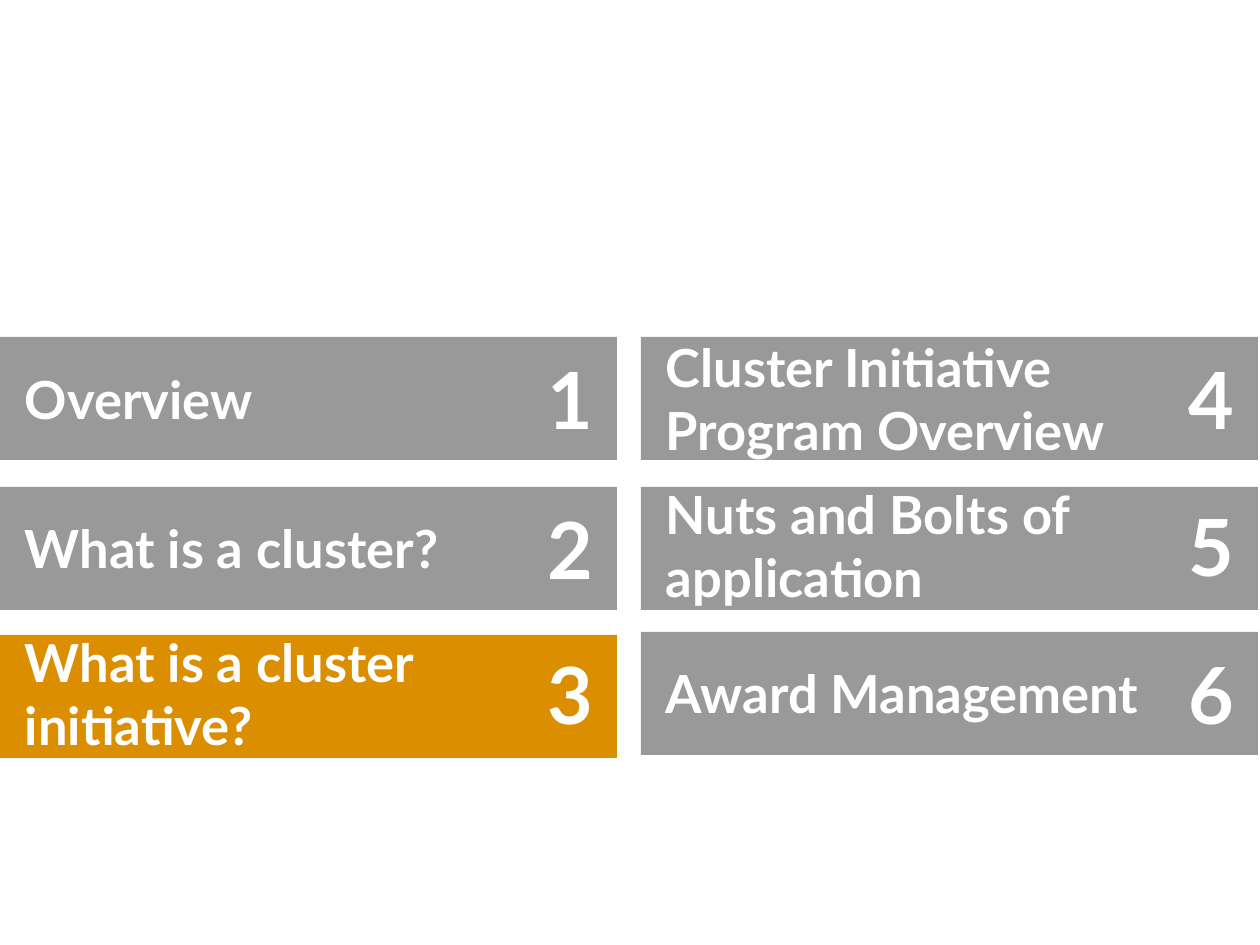
from dataclasses import dataclass

from lxml import etree
from pptx import Presentation
from pptx.dml.color import RGBColor
from pptx.enum.shapes import MSO_SHAPE
from pptx.enum.text import MSO_ANCHOR, MSO_AUTO_SIZE, PP_ALIGN
from pptx.oxml.ns import qn
from pptx.util import Emu, Pt

RECT = MSO_SHAPE.RECTANGLE
MIDDLE = MSO_ANCHOR.MIDDLE
FIT_SHAPE, FIT_NONE = MSO_AUTO_SIZE.SHAPE_TO_FIT_TEXT, MSO_AUTO_SIZE.NONE
LEFT, RIGHT = PP_ALIGN.LEFT, PP_ALIGN.RIGHT

PX_PER_INCH = 126
FONT = "Lato"
COLORS = {"current": "DA8E00", "other": "343434", "text": "FFFFFF"}

# Sizes in px
BAR_W, BAR_H = 617, 123
LABEL_W, LABEL_H = 517, 70
NUMBER_W, NUMBER_H = 47, 96
LABEL_DX, NUMBER_DX = 25, 546
NUMBER_RISE = 13  # centres the number on its label
COLUMNS = (0, 641)


@dataclass
class Topic:
    label: str
    column: int
    bar_top: int
    label_top: int
    current: bool = False


TOPICS = [
    Topic("Overview", 0, 337, 363),
    Topic("What is a cluster?", 0, 487, 513),
    Topic("What is a cluster initiative?", 0, 635, 658, current=True),
    Topic("Cluster Initiative Program Overview", 1, 337, 363),
    Topic("Nuts and Bolts of application", 1, 487, 510),
    Topic("Award Management", 1, 632, 658),
]


def px(n: int) -> Emu:
    return Emu(round(n * 914400 / PX_PER_INCH))


def add_bar(s, topic: Topic) -> None:
    sp = s.shapes.add_shape(RECT, px(COLUMNS[topic.column]), px(topic.bar_top),
                            px(BAR_W), px(BAR_H))
    sp.shadow.inherit = False
    sp.line.fill.background()
    sp.fill.solid()
    color = COLORS["current" if topic.current else "other"]
    sp.fill.fore_color.rgb = RGBColor.from_string(color)
    if not topic.current:
        # Half transparent
        clr = sp._element.spPr.find(qn("a:solidFill")).find(qn("a:srgbClr"))
        etree.SubElement(clr, qn("a:alpha")).set("val", "50000")


def add_text(s, text: str, x: int, y: int, w: int, h: int, size: int,
             align, wrap: bool, fit) -> None:
    sp = s.shapes.add_textbox(px(x), px(y), px(w), px(h))
    tf = sp.text_frame
    tf.margin_left = tf.margin_top = tf.margin_right = tf.margin_bottom = 0
    tf.vertical_anchor = MIDDLE
    tf.word_wrap = wrap
    tf.auto_size = fit
    p = tf.paragraphs[0]
    p.alignment = align
    r = p.add_run()
    r.text = text
    r.font.name = FONT
    r.font.size = Pt(size)
    r.font.bold = True
    r.font.color.rgb = RGBColor.from_string(COLORS["text"])


def add_topic(s, number: int, topic: Topic) -> None:
    x, y = COLUMNS[topic.column], topic.label_top
    add_bar(s, topic)
    add_text(s, topic.label, x + LABEL_DX, y, LABEL_W, LABEL_H,
             30, LEFT, True, FIT_NONE)
    add_text(s, str(number), x + NUMBER_DX, y - NUMBER_RISE, NUMBER_W, NUMBER_H,
             45, RIGHT, False, FIT_SHAPE)


def main() -> None:
    prs = Presentation()
    prs.slide_width, prs.slide_height = px(1260), px(945)
    s = prs.slides.add_slide(prs.slide_layouts[6])

    # Numbered agenda in two columns
    for number, topic in enumerate(TOPICS, start=1):
        add_topic(s, number, topic)

    prs.save("out.pptx")


if __name__ == "__main__":
    main()
